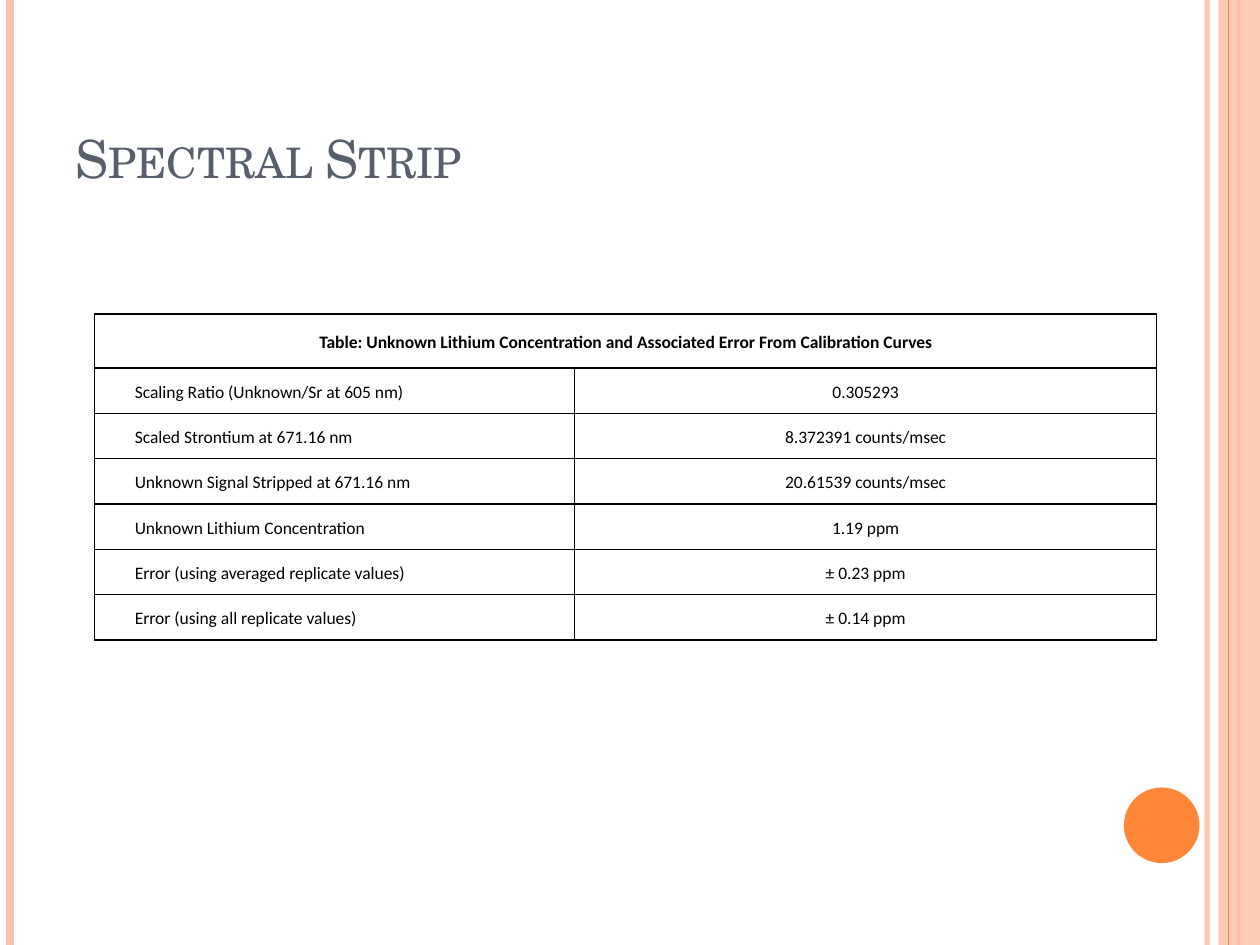
from lxml import etree
from pptx import Presentation
from pptx import util as u
from pptx.dml.color import RGBColor
from pptx.enum import shapes, text
from pptx.oxml.ns import qn

# Content
TITLE = "Spectral Strip"
TABLE_HEADING = ("Table: Unknown Lithium Concentration and Associated Error "
                 "From Calibration Curves")
RESULTS = [
    ("Scaling Ratio (Unknown/Sr at 605 nm)", "0.305293"),
    ("Scaled Strontium at 671.16 nm", "8.372391 counts/msec"),
    ("Unknown Signal Stripped at 671.16 nm", "20.61539 counts/msec"),
    ("Unknown Lithium Concentration", "1.19 ppm"),
    ("Error (using averaged replicate values)", "± 0.23 ppm"),
    ("Error (using all replicate values)", "± 0.14 ppm"),
]

# Style
COLORS = {"peach": "FEC3AE", "orange": "FE8637", "slate": "575F6D",
          "black": "000000"}
TITLE_FONT, TABLE_FONT = "TeX Gyre Schola", "Calibri"
SLIDE_WIDTH, SLIDE_HEIGHT = 10, 7.5
COLUMN_WIDTHS = (3.81, 4.62)
HEADING_HEIGHT, ROW_HEIGHT = 0.43, 0.36
CELL_MARGIN, LABEL_INDENT = 0.07, 0.25

# Vertical stripes: x, colour, width in points, opacity in percent
STRIPES_BEHIND = [(9.58, "peach", 3, 93), (0.08, "peach", 4.5, 100),
                  (9.83, "orange", 1.5, 100)]
STRIPE_IN_FRONT = (9.75, "orange", 0.75, 100)


def rgb(name):
    return RGBColor.from_string(COLORS[name])


def set_opacity(element, percent):
    color = element.find(".//" + qn("a:srgbClr"))
    etree.SubElement(color, qn("a:alpha"), val=str(percent * 1000))


def add_stripe(slide, x, color, width, opacity):
    stripe = slide.shapes.add_connector(
        shapes.MSO_CONNECTOR.STRAIGHT,
        u.Inches(x), 0, u.Inches(x), u.Inches(SLIDE_HEIGHT))
    stripe.line.color.rgb = rgb(color)
    stripe.line.width = u.Pt(width)
    properties = stripe._element.spPr
    if opacity < 100:
        set_opacity(properties, opacity)
    etree.SubElement(properties, qn("a:effectLst"))


def add_filled(slide, kind, color, *box):
    shape = slide.shapes.add_shape(kind, *map(u.Inches, box))
    shape.shadow.inherit = False
    shape.fill.solid()
    shape.fill.fore_color.rgb = rgb(color)
    shape.line.fill.background()
    return shape


def format_run(run, font, size, color, bold=False):
    run.font.name = font
    run.font.size = u.Pt(size)
    run.font.color.rgb = rgb(color)
    run.font.bold = bold


def add_borders(cell):
    properties = cell._tc.get_or_add_tcPr()
    for position, side in enumerate(("lnL", "lnR", "lnT", "lnB")):
        border = etree.Element(qn("a:" + side), w=str(u.Pt(1)))
        fill = etree.SubElement(border, qn("a:solidFill"))
        etree.SubElement(fill, qn("a:srgbClr"), val=COLORS["black"])
        properties.insert(position, border)


def fill_cell(cell, words, centered=True, bold=False):
    cell.text_frame.text = words
    cell.vertical_anchor = text.MSO_ANCHOR.MIDDLE
    cell.margin_top = cell.margin_bottom = 0
    cell.margin_right = u.Inches(CELL_MARGIN)
    cell.margin_left = u.Inches(CELL_MARGIN + (0 if centered else LABEL_INDENT))
    paragraph = cell.text_frame.paragraphs[0]
    paragraph.line_spacing = 1.15
    paragraph.alignment = (text.PP_ALIGN.CENTER if centered
                           else text.PP_ALIGN.LEFT)
    for run in paragraph.runs:
        format_run(run, TABLE_FONT, 10, "black", bold)


def add_title(slide):
    box = slide.shapes.add_textbox(*map(u.Inches, (0.5, 0.3, 8.17, 1.25)))
    frame = box.text_frame
    frame.word_wrap = True
    frame.vertical_anchor = text.MSO_ANCHOR.BOTTOM
    frame.text = TITLE
    run = frame.paragraphs[0].runs[0]
    format_run(run, TITLE_FONT, 30, "slate")
    run.font._element.set("cap", "small")


def add_results_table(slide):
    row_count = len(RESULTS) + 1
    height = HEADING_HEIGHT + ROW_HEIGHT * len(RESULTS)
    table = slide.shapes.add_table(
        row_count, 2, u.Inches(0.75), u.Inches(2.49),
        u.Inches(sum(COLUMN_WIDTHS)), u.Inches(height)).table
    table.first_row = table.horz_banding = False
    for column, width in zip(table.columns, COLUMN_WIDTHS):
        column.width = u.Inches(width)
    for index, row in enumerate(table.rows):
        row.height = u.Inches(ROW_HEIGHT if index else HEADING_HEIGHT)

    for cell in table.iter_cells():
        cell.fill.background()
        add_borders(cell)
    table.cell(0, 0).merge(table.cell(0, 1))
    fill_cell(table.cell(0, 0), TABLE_HEADING, bold=True)
    for row, (label, value) in enumerate(RESULTS, start=1):
        fill_cell(table.cell(row, 0), label, centered=False)
        fill_cell(table.cell(row, 1), value)


def main():
    presentation = Presentation()
    presentation.slide_width = u.Inches(SLIDE_WIDTH)
    presentation.slide_height = u.Inches(SLIDE_HEIGHT)
    slide = presentation.slides.add_slide(presentation.slide_layouts[6])

    # Side decoration
    for stripe in STRIPES_BEHIND:
        add_stripe(slide, *stripe)
    band = add_filled(slide, shapes.MSO_SHAPE.RECTANGLE, "peach",
                      9.67, 0, 0.33, SLIDE_HEIGHT)
    set_opacity(band._element.spPr, 87)
    add_stripe(slide, *STRIPE_IN_FRONT)
    add_filled(slide, shapes.MSO_SHAPE.OVAL, "orange", 8.92, 6.25, 0.6, 0.6)

    # Title and table
    add_title(slide)
    add_results_table(slide)
    presentation.save("out.pptx")


if __name__ == "__main__":
    main()
